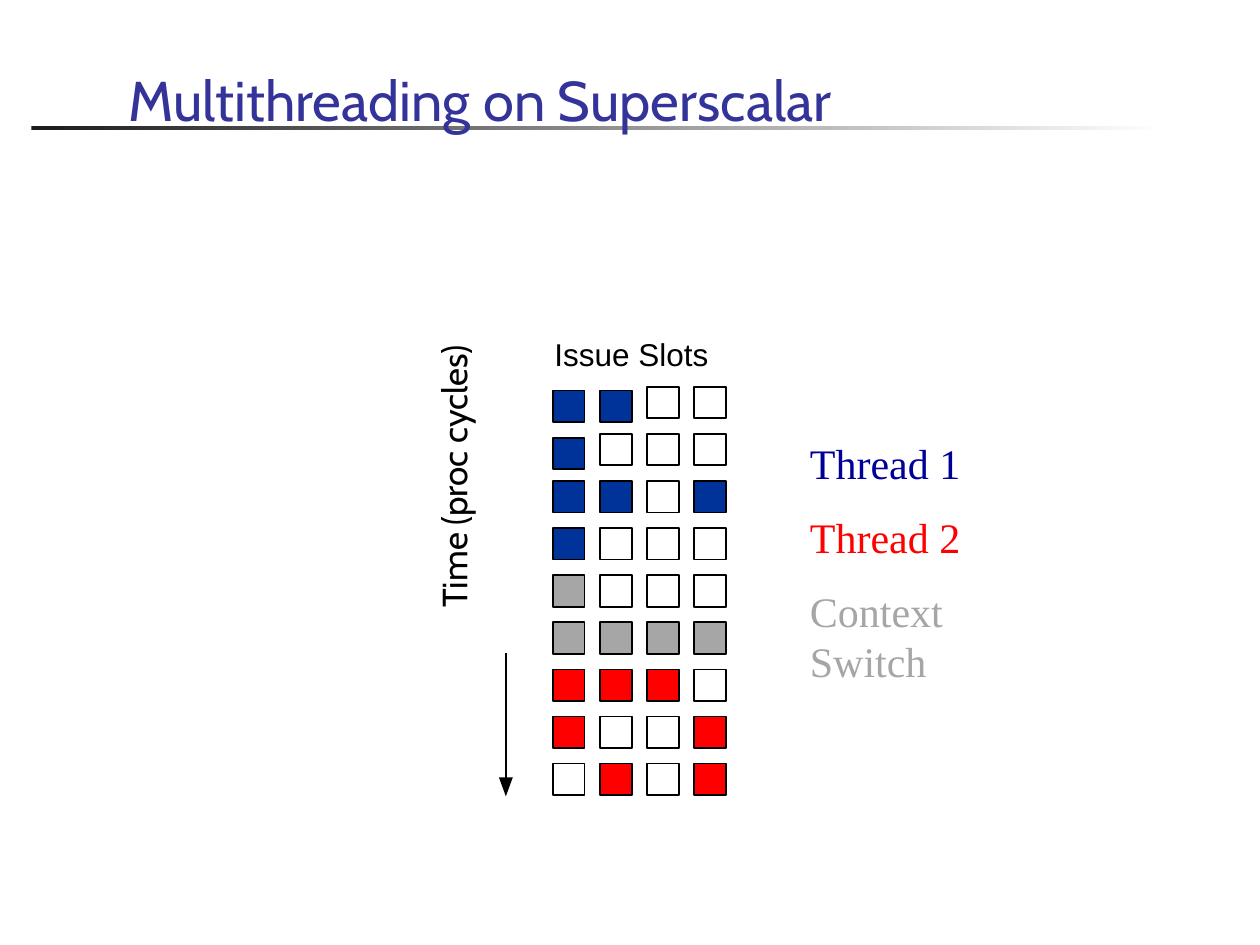
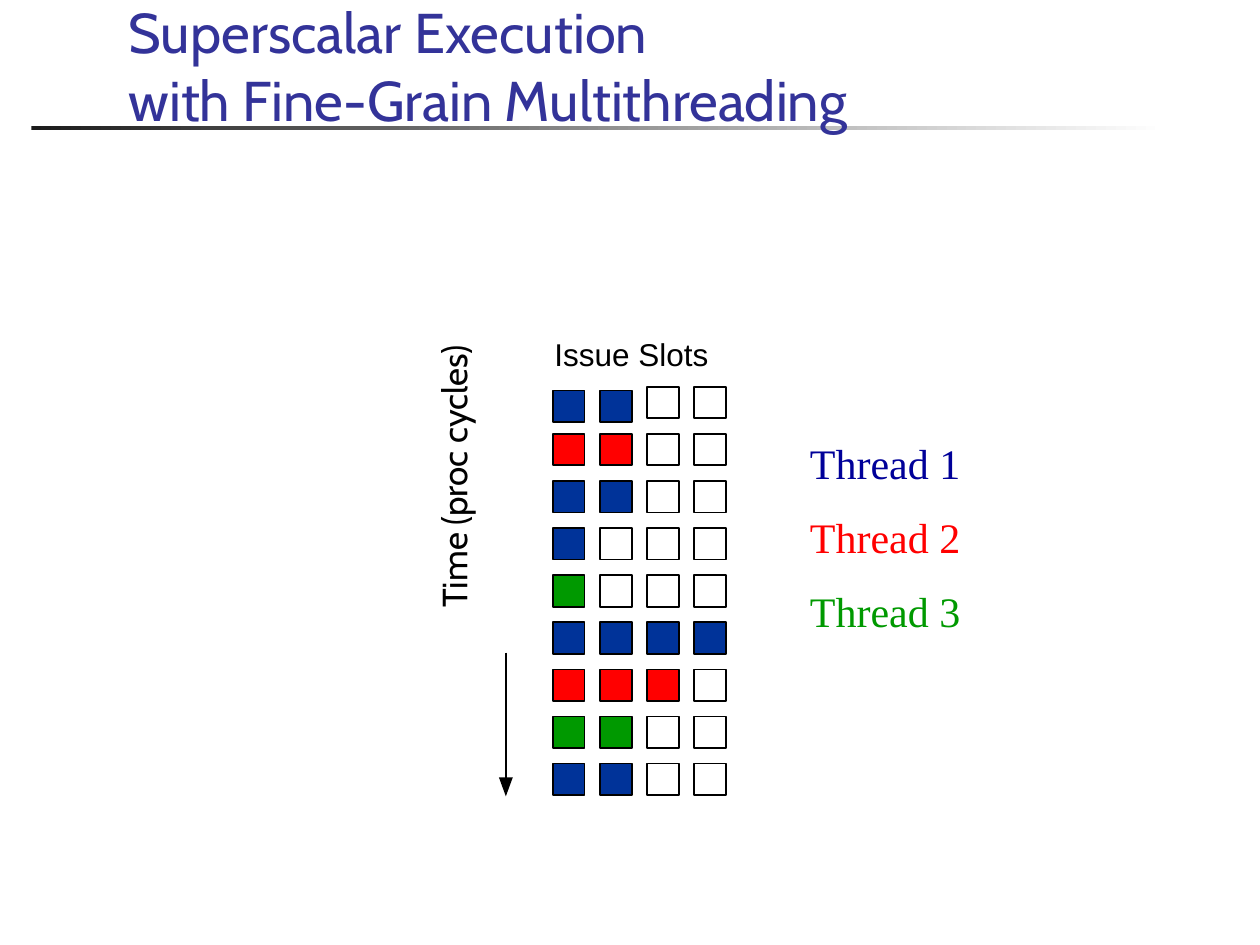
from lxml import etree
from pptx import Presentation
from pptx.dml.color import RGBColor
from pptx.enum.shapes import MSO_CONNECTOR, MSO_SHAPE
from pptx.enum.text import MSO_ANCHOR, MSO_AUTO_SIZE, PP_ALIGN
from pptx.oxml.ns import qn
from pptx.util import Inches, Pt

RECT = MSO_SHAPE.RECTANGLE
LINE = MSO_CONNECTOR.STRAIGHT
LEFT = PP_ALIGN.LEFT
TOP, BOTTOM = MSO_ANCHOR.TOP, MSO_ANCHOR.BOTTOM
FIXED = MSO_AUTO_SIZE.NONE

HEX = {
    "title": "333399", "ink": "000000", "dark": "1C1C1C", "white": "FFFFFF",
    "navy": "000099", "blue": "003399", "red": "FF0000",
    "green": "009900", "gray": "A6A6A6",
}
FILL = {"B": "blue", "R": "red", "G": "green", "K": "gray", ".": "white"}
CELL, DROP = 0.25, 0.03

SLIDES = [
    ("Multithreading on Superscalar",
     "bb.. b... BB.B B... K... KKKK RRR. R..R .R.R",
     [("Thread 1", "navy"), ("Thread 2", "red"), ("Context Switch", "gray")]),
    ("Superscalar Execution\nwith Fine-Grain Multithreading",
     "bb.. RR.. BB.. B... G... BBBB RRR. GG.. BB..",
     [("Thread 1", "navy"), ("Thread 2", "red"), ("Thread 3", "green")]),
]


def color(name):
    """Return the named colour."""
    return RGBColor.from_string(HEX[name])


def write(shape, lines, size=18, font="Cabin", anchor=TOP, inset=None,
          gap=0, pitch=None):
    """Fill a shape with (text, colour) paragraphs in one format."""
    frame = shape.text_frame
    frame.word_wrap = True
    frame.auto_size = FIXED
    frame.vertical_anchor = anchor
    if inset is not None:
        frame.margin_left = frame.margin_right = Inches(inset)
        frame.margin_top = frame.margin_bottom = Inches(inset)
    for i, (text, hue) in enumerate(lines):
        para = frame.paragraphs[0] if i == 0 else frame.add_paragraph()
        para.text = text
        para.alignment = LEFT
        para.space_before = Pt(gap if i else 0)
        if pitch:
            para.line_spacing = pitch
        for run in para.runs:
            run.font.size = Pt(size)
            run.font.name = font
            run.font.color.rgb = color(hue)


def label(slide, box, lines, turn=0, **style):
    """Add a text box, turned if asked."""
    shape = slide.shapes.add_textbox(*map(Inches, box))
    shape.rotation = turn
    write(shape, lines, **style)


def head(slide, box, text):
    """Set the title and lay the fading rule behind it."""
    title = slide.shapes.title
    title.left, title.top, title.width, title.height = map(Inches, box)
    write(title, [(text, "title")], size=32, anchor=BOTTOM)
    left, top, wide, high = box
    rule = slide.shapes.add_shape(
        RECT, Inches(left - 0.67), Inches(top + high - 0.1),
        Inches(9), Inches(0.03))
    rule.shadow.inherit = False
    rule.line.fill.background()
    rule.fill.gradient()
    rule.fill.gradient_angle = 0
    for stop, hue in zip(rule.fill.gradient_stops, ("dark", "white")):
        stop.color.rgb = color(hue)
    title._element.addprevious(rule._element)


def grid(slide, box, rows):
    """Draw the issue slots; a small letter marks a slot set slightly lower."""
    left, top, wide, high = box
    across = (wide - CELL) / (len(rows[0]) - 1)
    down = (high - CELL) / (len(rows) - 1)
    for i, row in enumerate(rows):
        for j, code in enumerate(row):
            y = top + i * down + (DROP if code.islower() else 0)
            slot = slide.shapes.add_shape(
                RECT, Inches(left + j * across), Inches(y),
                Inches(CELL), Inches(CELL))
            slot.shadow.inherit = False
            slot.fill.solid()
            slot.fill.fore_color.rgb = color(FILL[code.upper()])
            slot.line.color.rgb = color("ink")
            slot.line.width = Pt(1)


def arrow(slide, box):
    """Draw the downward time arrow with a solid tip."""
    left, top, wide, high = box
    mid, end = left + wide / 2, top + high
    neck = end - 0.15
    stem = slide.shapes.add_connector(
        LINE, *map(Inches, (mid, top, mid, end - 0.04)))
    stem.line.color.rgb = color("ink")
    stem.line.width = Pt(1)
    etree.SubElement(stem._element.spPr, qn("a:effectLst"))
    path = slide.shapes.build_freeform(Inches(mid), Inches(end))
    path.add_line_segments(
        [(Inches(left), Inches(neck)), (Inches(left + wide), Inches(neck))],
        close=True)
    tip = path.convert_to_shape()
    tip.shadow.inherit = False
    tip.fill.solid()
    tip.fill.fore_color.rgb = color("ink")
    tip.line.fill.background()


def chart(slide, box, rows, key):
    """Place the slot grid with its labels, time arrow and thread key."""
    left, top, wide, high = box
    label(slide, (left - 2.41, top, 3.29, 0.41),
          [("Time (proc cycles)", "ink")], turn=270, size=20, pitch=0.9)
    label(slide, (left + 0.01, top - 0.41, 1.31, 0.35),
          [("Issue Slots", "ink")], font="Arial", inset=0)
    grid(slide, box, rows)
    arrow(slide, (left - 0.43, top + 2.11, 0.11, 1.14))
    label(slide, (left + 1.94, top + 0.35, 2.17, 2.12), key,
          size=24, font="Times New Roman", gap=13.5)


def main():
    """Build and save the deck."""
    deck = Presentation()
    deck.slide_width, deck.slide_height = Inches(10), Inches(7.5)
    for title, rows, key in SLIDES:
        slide = deck.slides.add_slide(deck.slide_layouts[5])
        head(slide, (0.92, 0.58, 8.86, 0.52), title)
        chart(slide, (4.39, 3.07, 1.37, 3.24), rows.split(), key)
    deck.save("out.pptx")


if __name__ == "__main__":
    main()
